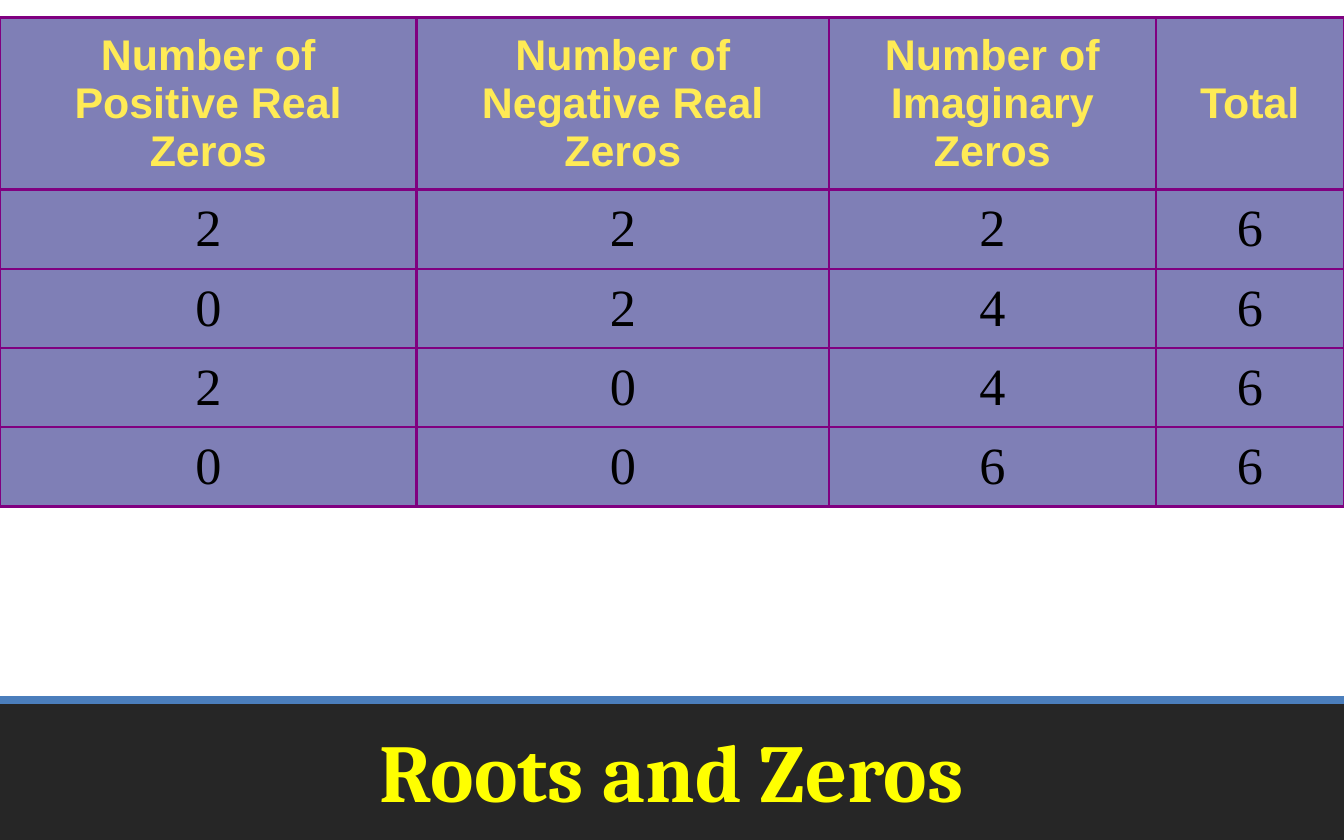
from dataclasses import dataclass

from lxml import etree
from pptx import Presentation
from pptx.dml.color import RGBColor
from pptx.enum.shapes import MSO_CONNECTOR, MSO_SHAPE
from pptx.enum.text import MSO_ANCHOR, MSO_AUTO_SIZE, PP_ALIGN
from pptx.oxml import parse_xml
from pptx.oxml.ns import nsdecls, qn
from pptx.util import Inches, Pt

CENTER = PP_ALIGN.CENTER
MIDDLE = MSO_ANCHOR.MIDDLE


@dataclass
class Theme:
    band: str = "262626"
    rule: str = "4B7EBC"
    cell: str = "00006E"
    grid: str = "800080"
    # font, size, colour, bold
    title: tuple = ("Cambria", 44, "FFFF00", True)
    head: tuple = ("Arial", 23, "FFEB55", True)
    body: tuple = ("Times New Roman", 28, "000000", False)


theme = Theme()


def write(frame, text, style):
    """Put one centred run in the frame's first paragraph."""
    para = frame.paragraphs[0]
    para.alignment = CENTER
    run = para.add_run()
    run.text = text
    name, size, color, bold = style
    run.font.name = name
    run.font.size = Pt(size)
    run.font.color.rgb = RGBColor.from_string(color)
    run.font.bold = bold


def paint(cell):
    """Give a cell its half-clear fill and its four borders."""
    cell.fill.solid()
    cell.fill.fore_color.rgb = RGBColor.from_string(theme.cell)
    props = cell._tc.get_or_add_tcPr()
    color = props.find(".//" + qn("a:srgbClr"))
    etree.SubElement(color, qn("a:alpha"), val="50000")
    for spot, side in enumerate("LRTB"):
        props.insert(spot, parse_xml(
            f'<a:ln{side} {nsdecls("a")} w="{Pt(1.5)}"><a:solidFill>'
            f'<a:srgbClr val="{theme.grid}"/></a:solidFill></a:ln{side}>'))


deck = Presentation()
deck.slide_width = Inches(10)
deck.slide_height = Inches(6.25)
slide = deck.slides.add_slide(deck.slide_layouts[5])
shapes = slide.shapes

# Footer band with its top rule
top = Inches(5.21)
high = Inches(1.04)
band = shapes.add_shape(MSO_SHAPE.RECTANGLE, 0, top, Inches(10), high)
band.shadow.inherit = False
band.fill.solid()
band.fill.fore_color.rgb = RGBColor.from_string(theme.band)
band.line.fill.background()

rule = shapes.add_connector(MSO_CONNECTOR.STRAIGHT, 0, top, Inches(10), top)
rule.line.color.rgb = RGBColor.from_string(theme.rule)
rule.line.width = Pt(4)
etree.SubElement(rule.element.spPr, qn("a:effectLst"))

# Title, moved in front of the band
title = shapes.title
title.left, title.top = Inches(0.25), top
title.width, title.height = Inches(9.5), high
title.text_frame.vertical_anchor = MIDDLE
title.text_frame.word_wrap = True
title.text_frame.auto_size = MSO_AUTO_SIZE.NONE
write(title.text_frame, "Roots and Zeros", theme.title)
shapes.element.append(title.element)

# Table of possible zeros; each row adds up to its total
heads = ["Number of Positive Real Zeros", "Number of Negative Real Zeros",
         "Number of Imaginary Zeros", "Total"]
zeros = [(2, 2, 2), (0, 2, 4), (2, 0, 4), (0, 0, 6)]
rows = [heads] + [[*row, sum(row)] for row in zeros]
widths = [3.1, 3.07, 2.43, 1.4]
heights = [1.28] + [0.59] * len(zeros)

table = shapes.add_table(len(rows), len(heads), 0, Inches(0.13),
                         Inches(10), Inches(sum(heights))).table
table.first_row = False
table.horz_banding = False
for col, width in zip(table.columns, widths):
    col.width = Inches(width)
for r, (row, height) in enumerate(zip(rows, heights)):
    table.rows[r].height = Inches(height)
    for c, value in enumerate(row):
        cell = table.cell(r, c)
        cell.vertical_anchor = MIDDLE
        cell.margin_left = cell.margin_right = Inches(0.12)
        cell.margin_top = cell.margin_bottom = Inches(0.06)
        write(cell.text_frame, str(value), theme.body if r else theme.head)
        paint(cell)

deck.save("out.pptx")
